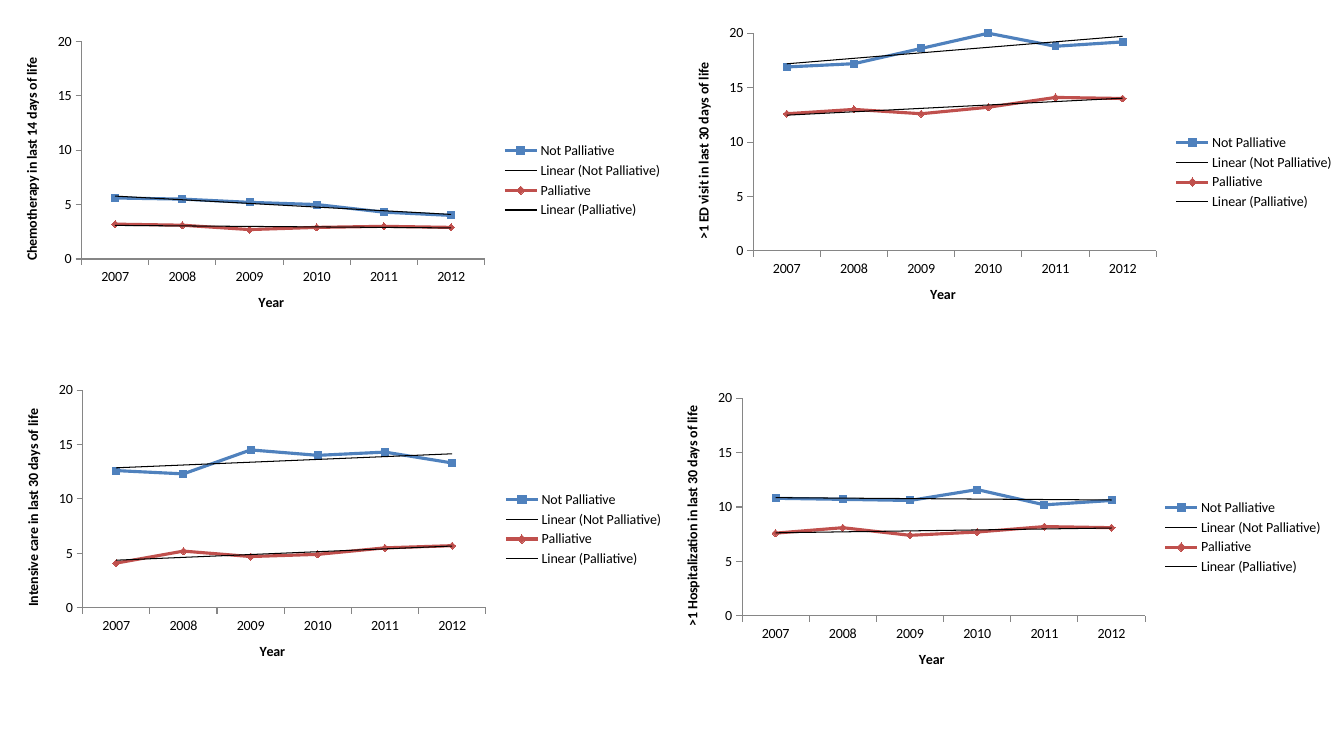
from lxml import etree
from pptx import Presentation
from pptx import util as u
from pptx.chart.data import CategoryChartData
from pptx.dml.color import RGBColor
from pptx.enum import chart as kinds
from pptx.oxml import parse_xml
from pptx.oxml.ns import nsdecls, qn

YEARS = ["2007", "2008", "2009", "2010", "2011", "2012"]

# Left and top in percent of the slide, axis title, values of each group
PANELS = [
    (0.07, 3.87, "Chemotherapy in last 14 days of life",
     [5.6, 5.5, 5.2, 5, 4.3, 4], [3.2, 3.1, 2.7, 2.9, 3, 2.9]),
    (50.04, 2.8, ">1 ED visit in last 30 days of life",
     [16.9, 17.2, 18.6, 20, 18.8, 19.2], [12.6, 13, 12.6, 13.2, 14.1, 14]),
    (0.15, 50, "Intensive care in last 30 days of life",
     [12.6, 12.3, 14.5, 14, 14.3, 13.3], [4.1, 5.2, 4.7, 4.9, 5.5, 5.7]),
    (49.21, 51.07, ">1 Hospitalization in last 30 days of life",
     [10.8, 10.7, 10.6, 11.6, 10.2, 10.6], [7.6, 8.1, 7.4, 7.7, 8.2, 8.1]),
]


def color(value):
    return RGBColor.from_string(value)


class Page:
    font, size = "Calibri", 10
    ink, axis_ink = "000000", "868686"
    groups = [
        ("Not Palliative", "4F81BD", kinds.XL_MARKER_STYLE.SQUARE),
        ("Palliative", "C0504D", kinds.XL_MARKER_STYLE.DIAMOND),
    ]
    panel_width, panel_height = 50, 40
    plot_area = {"x": 0.12, "y": 0.04, "w": 0.6, "h": 0.72}

    def __init__(self, deck):
        self.deck = deck
        self.slide = deck.slides.add_slide(deck.slide_layouts[6])

    def across(self, percent):
        return int(self.deck.slide_width * percent / 100)

    def down(self, percent):
        return int(self.deck.slide_height * percent / 100)

    def line_chart(self, left, top, title, *values):
        data = CategoryChartData()
        data.categories = YEARS
        for (name, _, _), row in zip(self.groups, values):
            data.add_series(name, row)
        chart = self.slide.shapes.add_chart(
            kinds.XL_CHART_TYPE.LINE_MARKERS, self.across(left), self.down(top),
            self.across(self.panel_width), self.down(self.panel_height), data).chart
        chart.has_title = False
        self.style_font(chart.font)

        # Axes
        self.style_axis(chart.category_axis, "Year")
        scale = chart.value_axis
        self.style_axis(scale, title)
        scale.has_major_gridlines = False
        scale.minimum_scale, scale.maximum_scale, scale.major_unit = 0, 20, 5

        # Series with their trend lines
        chart.plots[0].vary_by_categories = False
        for series, (_, shade, marker) in zip(chart.plots[0].series, self.groups):
            self.style_series(series, shade, marker)
            self.add_trend(series)
        self.place_plot(chart)
        self.add_legend(chart)

    def style_font(self, font, bold=False):
        font.name, font.size, font.bold = self.font, u.Pt(self.size), bold
        font.color.rgb = color(self.ink)

    def style_axis(self, axis, title):
        frame = axis.axis_title.text_frame
        frame.text = title
        self.style_font(frame.paragraphs[0].runs[0].font, bold=True)
        axis.major_tick_mark = kinds.XL_TICK_MARK.OUTSIDE
        axis.minor_tick_mark = kinds.XL_TICK_MARK.NONE
        axis.format.line.color.rgb = color(self.axis_ink)
        axis.format.line.width = u.Pt(0.75)

    def style_series(self, series, shade, marker):
        series.smooth = False
        series.format.line.color.rgb = color(shade)
        series.format.line.width = u.Pt(2.25)
        series.marker.style, series.marker.size = marker, 5
        series.marker.format.fill.solid()
        series.marker.format.fill.fore_color.rgb = color(shade)
        series.marker.format.line.color.rgb = color(shade)

    def add_trend(self, series):
        trend = parse_xml(
            f'<c:trendline {nsdecls("c", "a")}><c:spPr><a:ln w="9525"><a:solidFill>'
            f'<a:srgbClr val="{self.ink}"/></a:solidFill></a:ln></c:spPr>'
            '<c:trendlineType val="linear"/><c:dispRSqr val="0"/><c:dispEq val="0"/>'
            '</c:trendline>')
        series._element.find(qn("c:cat")).addprevious(trend)

    def place_plot(self, chart):
        area = chart._chartSpace.chart.plotArea
        for layout in area.findall(qn("c:layout")):
            area.remove(layout)
        layout = parse_xml(f'<c:layout {nsdecls("c")}><c:manualLayout/></c:layout>')
        settings = {"layoutTarget": "inner", "xMode": "edge", "yMode": "edge",
                    **self.plot_area}
        for tag, value in settings.items():
            etree.SubElement(layout[0], qn(f"c:{tag}")).set("val", str(value))
        area.insert(0, layout)

    def add_legend(self, chart):
        chart.has_legend = True
        legend = chart.legend
        legend.position = kinds.XL_LEGEND_POSITION.RIGHT
        legend.include_in_layout = False
        self.style_font(legend.font)
        # Entries 2 and 3 belong to the trend lines
        for index in (3, 2):
            entry = parse_xml(f'<c:legendEntry {nsdecls("c")}><c:idx val="{index}"/>'
                              '<c:delete val="1"/></c:legendEntry>')
            legend._element.find(qn("c:legendPos")).addnext(entry)


def main():
    deck = Presentation()
    deck.slide_width, deck.slide_height = u.Inches(13.33), u.Inches(7.5)
    page = Page(deck)
    for panel in PANELS:
        page.line_chart(*panel)
    deck.save("out.pptx")


if __name__ == "__main__":
    main()
